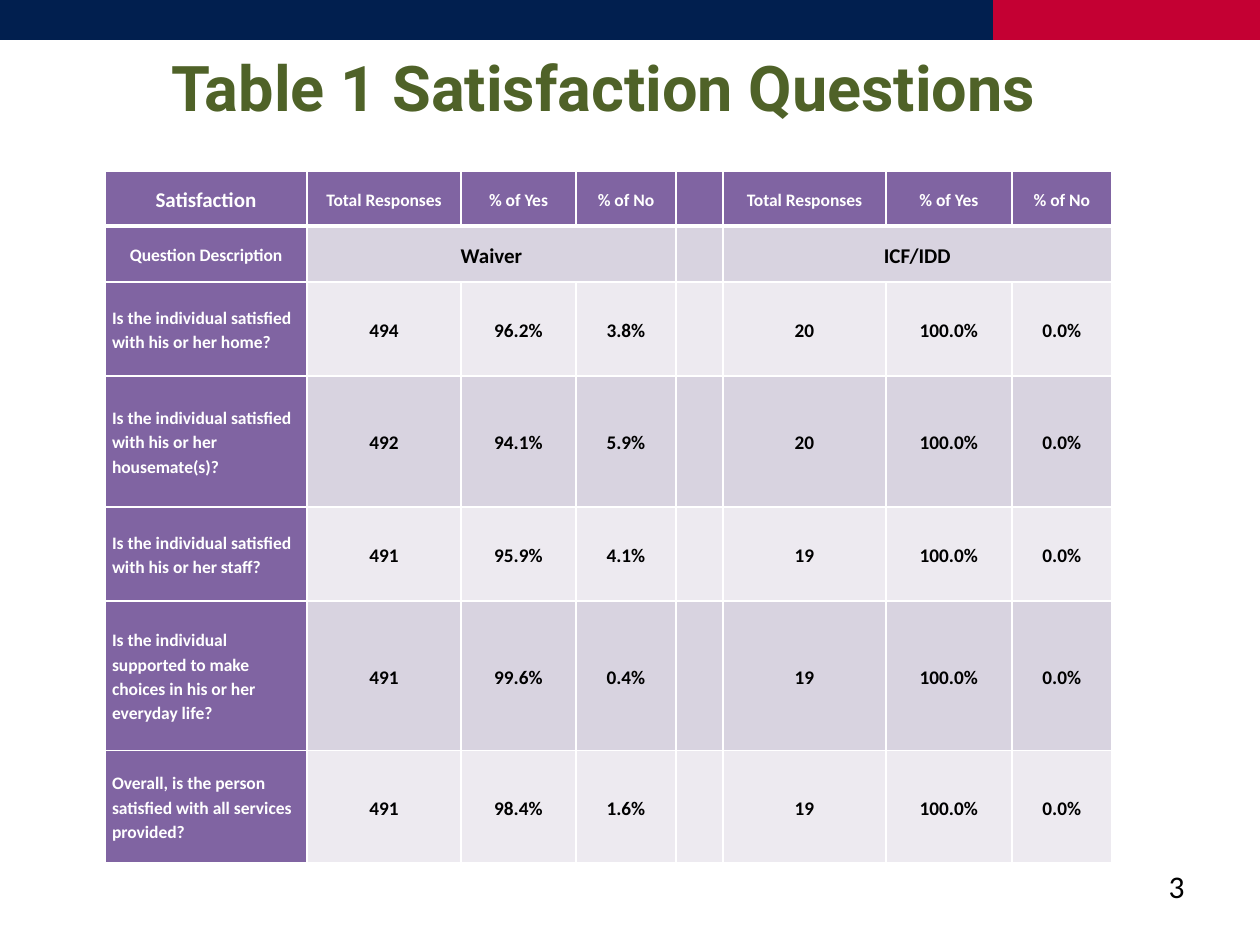
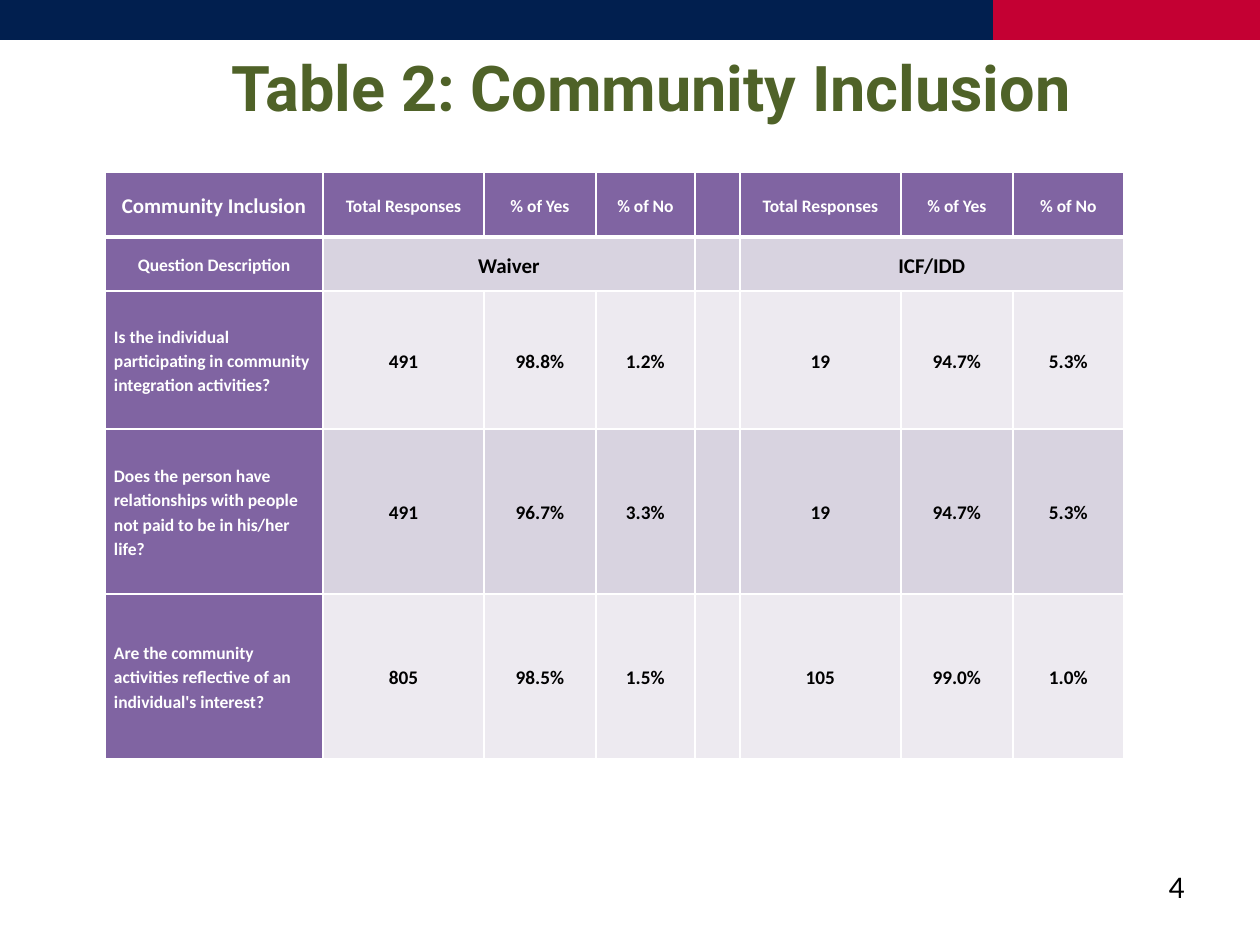
"""Builds the two survey result pages."""
import pptx
import pptx.dml.color
import pptx.enum.shapes
import pptx.enum.text
import pptx.oxml
import pptx.oxml.ns
import pptx.util

RGB = pptx.dml.color.RGBColor
ALIGN = pptx.enum.text.PP_ALIGN
ANCHOR = pptx.enum.text.MSO_ANCHOR

NAVY = RGB(0x01, 0x1F, 0x4F)
RED = RGB(0xC4, 0x00, 0x33)
OLIVE = RGB(0x4F, 0x62, 0x28)
PURPLE = RGB(0x80, 0x64, 0xA2)
LILAC = RGB(0xD8, 0xD3, 0xE0)
PALE = RGB(0xED, 0xEA, 0xF0)
WHITE = RGB(0xFF, 0xFF, 0xFF)
BLACK = RGB(0x00, 0x00, 0x00)

TITLE_FONT = "Roboto"
BODY_FONT = "Calibri"
PX_PER_INCH = 126
PAGE_WIDTH, PAGE_HEIGHT = 1260, 945
BAND_HEIGHT, BAND_SPLIT = 40, 993
NUMBER_BOX = (903, 861, 294, 63)
MEASURES = ["Total Responses", "% of Yes", "% of No"]
GAP_COLUMN = 4
GROUPS = {1: "Waiver", 5: "ICF/IDD"}

PAGES = [
    {
        "number": 3,
        "title": "Table 1 Satisfaction Questions",
        "title_box": (63, 42, 1081, 116),
        "topic": "Satisfaction",
        "table_origin": (105, 171),
        "inset": 7,
        "columns": [202, 154, 115, 100, 47, 163, 126, 100],
        "rows": [55, 56, 94, 131, 94, 150, 112],
        "answers": [
            ("Is the individual satisfied with his or her home?",
             ["494", "96.2%", "3.8%"], ["20", "100.0%", "0.0%"]),
            ("Is the individual satisfied with his or her housemate(s)?",
             ["492", "94.1%", "5.9%"], ["20", "100.0%", "0.0%"]),
            ("Is the individual satisfied with his or her staff?",
             ["491", "95.9%", "4.1%"], ["19", "100.0%", "0.0%"]),
            ("Is the individual supported to make choices in his or her everyday life?",
             ["491", "99.6%", "0.4%"], ["19", "100.0%", "0.0%"]),
            ("Overall, is the person satisfied with all services provided?",
             ["491", "98.4%", "1.6%"], ["19", "100.0%", "0.0%"]),
        ],
    },
    {
        "number": 4,
        "title": "Table 2: Community Inclusion",
        "title_box": (116, 42, 1071, 130),
        "topic": "Community Inclusion",
        "table_origin": (105, 172),
        "inset": 9,
        "columns": [218, 161, 112, 99, 45, 161, 112, 111],
        "rows": [65, 54, 138, 165, 165],
        "answers": [
            ("Is the individual participating in community integration activities?",
             ["491", "98.8%", "1.2%"], ["19", "94.7%", "5.3%"]),
            ("Does the person have relationships with people not paid to be in his/her life?",
             ["491", "96.7%", "3.3%"], ["19", "94.7%", "5.3%"]),
            ("Are the community activities reflective of an individual's interest?",
             ["805", "98.5%", "1.5%"], ["105", "99.0%", "1.0%"]),
        ],
    },
]


def px(length):
    """Turn px into EMU."""
    return pptx.util.Emu(round(length * 914400 / PX_PER_INCH))


def place(box):
    """Turn a px box into EMU lengths."""
    return [px(length) for length in box]


def write(frame, text, size, color, align, font=BODY_FONT, bold=True):
    """Put one formatted paragraph in a text frame and return it."""
    frame.text = text
    para = frame.paragraphs[0]
    para.alignment = align
    for span in para.runs:
        span.font.name = font
        span.font.size = pptx.util.Pt(size)
        span.font.bold = bold
        span.font.color.rgb = color
    return para


def add_band(page, box, color):
    """Draw one plain coloured band."""
    band = page.shapes.add_shape(pptx.enum.shapes.MSO_SHAPE.RECTANGLE, *place(box))
    band.shadow.inherit = False
    band.fill.solid()
    band.fill.fore_color.rgb = color
    band.line.fill.background()


def add_title(page, text, box):
    """Move, fill and format the title placeholder."""
    title = page.shapes.title
    title.left, title.top, title.width, title.height = place(box)
    frame = title.text_frame
    frame.vertical_anchor = ANCHOR.TOP
    frame.auto_size = pptx.enum.text.MSO_AUTO_SIZE.NONE
    write(frame, text, 36, OLIVE, ALIGN.CENTER, TITLE_FONT)


def add_page_number(page, number):
    """Write the page number at the lower right."""
    frame = page.shapes.add_textbox(*place(NUMBER_BOX)).text_frame
    frame.word_wrap = True
    write(frame, str(number), 18, BLACK, ALIGN.RIGHT, bold=False)


def set_borders(cell, top, bottom):
    """Give a cell white borders, with the top and bottom widths in points."""
    properties = cell._tc.get_or_add_tcPr()
    widths = {"lnL": 1, "lnR": 1, "lnT": top, "lnB": bottom}
    for position, (side, width) in enumerate(widths.items()):
        line = pptx.oxml.parse_xml(
            f'<a:{side} {pptx.oxml.ns.nsdecls("a")} w="{pptx.util.Pt(width)}">'
            f'<a:solidFill><a:srgbClr val="{WHITE}"/></a:solidFill></a:{side}>')
        properties.insert(position, line)


def fill_cell(cell, row, column, text, inset):
    """Format one cell by its place in the table."""
    is_label = row == 0 or column == 0
    is_answer = row > 1 and column > 0
    cell.fill.solid()
    cell.fill.fore_color.rgb = PURPLE if is_label else LILAC if row % 2 else PALE
    set_borders(cell, 3 if row == 1 else 1, 3 if row == 0 else 1)
    cell.vertical_anchor = ANCHOR.MIDDLE
    cell.margin_left = cell.margin_right = px(9 if is_answer else inset)
    cell.margin_top = cell.margin_bottom = 0
    if not text:
        return
    is_heading = row == column == 0 or (row == 1 and column > 0)
    size = 12 if is_heading else 11 if is_answer else 10
    align = ALIGN.LEFT if column == 0 and row > 1 else ALIGN.CENTER
    para = write(cell.text_frame, text, size, WHITE if is_label else BLACK, align)
    para.line_spacing = 1.15
    if is_answer:
        para.space_after = pptx.util.Pt(10)


def add_answer_table(page, content):
    """Build the table of answers for both groups."""
    columns, heights = content["columns"], content["rows"]
    grid = [
        [content["topic"], *MEASURES, "", *MEASURES],
        ["Question Description"] + [GROUPS.get(column, "") for column in range(1, len(columns))],
    ]
    grid += [[question, *waiver, "", *icf] for question, waiver, icf in content["answers"]]
    box = (*content["table_origin"], sum(columns), sum(heights))
    table = page.shapes.add_table(len(heights), len(columns), *place(box)).table
    table.first_row = table.horz_banding = False
    for column, width in zip(table.columns, columns):
        column.width = px(width)
    for row, height in zip(table.rows, heights):
        row.height = px(height)
    for row, texts in enumerate(grid):
        for column, text in enumerate(texts):
            fill_cell(table.cell(row, column), row, column, text, content["inset"])
    for first in GROUPS:
        table.cell(1, first).merge(table.cell(1, first + len(MEASURES) - 1))


def add_answer_page(deck, content):
    """Add one page with bands, title, table and number."""
    page = deck.slides.add_slide(deck.slide_layouts.get_by_name("Title Only"))
    add_band(page, (BAND_SPLIT, 0, PAGE_WIDTH - BAND_SPLIT, BAND_HEIGHT), RED)
    add_band(page, (0, 0, BAND_SPLIT, BAND_HEIGHT), NAVY)
    add_title(page, content["title"], content["title_box"])
    add_answer_table(page, content)
    add_page_number(page, content["number"])


def main():
    """Build and save the deck."""
    deck = pptx.Presentation()
    deck.slide_width, deck.slide_height = px(PAGE_WIDTH), px(PAGE_HEIGHT)
    for content in PAGES:
        add_answer_page(deck, content)
    deck.save("out.pptx")


if __name__ == "__main__":
    main()
